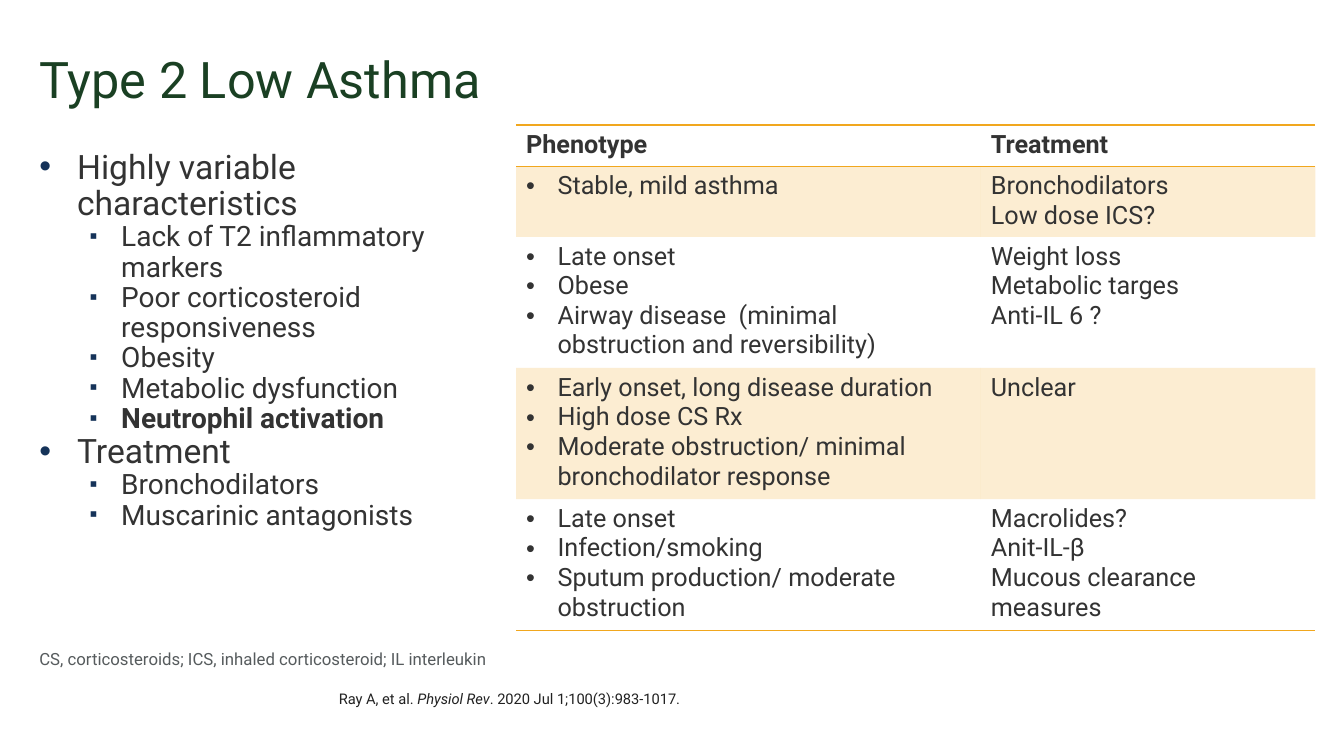
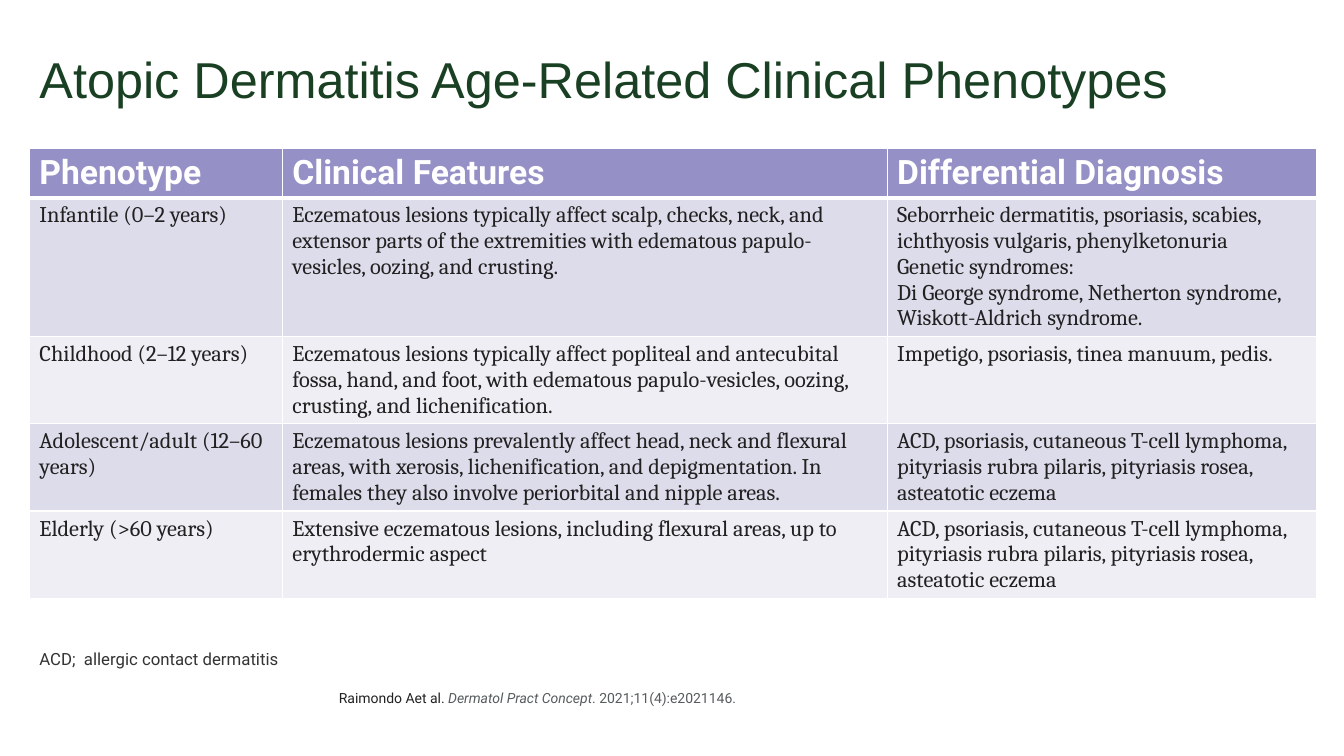
"""Build two clinical slides on asthma and dermatitis phenotypes."""
from lxml.etree import SubElement
from pptx import Presentation
from pptx.dml.color import RGBColor
from pptx.enum.text import MSO_ANCHOR as Anchor, MSO_AUTO_SIZE as AutoSize, PP_ALIGN as Align
from pptx.oxml.ns import qn
from pptx.util import Pt

COLORS = {
    "title": "1A4023", "body": "333333", "dark": "212121", "grey": "565B5D",
    "bullet": "153359", "gold": "F1A71E", "white": "FFFFFF",
    "header": "9591C7", "band": "DDDCEB", "pale": "EFEEF5",
}
PLAIN_TABLE = "{2D5ABB26-0587-4C30-8999-92F81FD0307C}"
LEFT, WIDTH = 21, 920
TITLE_AREA = (LEFT, 13.7, WIDTH, 90)
LIST_AREA = (LEFT, 103.7, 322.5, 350.6)
NOTE_AREA = (LEFT, 454.3, WIDTH, 27.4)
CITATION_AREA = (235, 490.3, 705.6, 45.4)

ASTHMA_POINTS = [
    (0, "Highly variable characteristics"),
    (1, "Lack of T2 inflammatory markers"),
    (1, "Poor corticosteroid responsiveness"),
    (1, "Obesity"),
    (1, "Metabolic dysfunction"),
    (1, "Neutrophil activation"),
    (0, "Treatment"),
    (1, "Bronchodilators"),
    (1, "Muscarinic antagonists"),
]
EMPHASIZED = {"Neutrophil activation"}
LEVELS = [
    {"size": 24, "char": "•", "margin": 27, "hang": 27, "percent": 100},
    {"size": 20, "char": "▪", "margin": 58.5, "hang": 22.5, "percent": 80},
]
CELL_BULLET = {"char": "•", "margin": 22.5, "hang": 22.5, "percent": 100}

ASTHMA_ROWS = [
    (["Phenotype"], ["Treatment"]),
    (["Stable, mild asthma"], ["Bronchodilators", "Low dose ICS?"]),
    (["Late onset", "Obese",
      "Airway disease  (minimal obstruction and reversibility)"],
     ["Weight loss", "Metabolic targes", "Anti-IL 6 ?"]),
    (["Early onset, long disease duration", "High dose CS Rx",
      "Moderate obstruction/ minimal bronchodilator response"],
     ["Unclear"]),
    (["Late onset", "Infection/smoking", "Sputum production/ moderate obstruction"],
     ["Macrolides?", "Anit-IL-β", "Mucous clearance measures"]),
]
ADULT_DIAGNOSES = ["ACD, psoriasis, cutaneous T-cell lymphoma, pityriasis rubra pilaris, "
                   "pityriasis rosea, asteatotic eczema"]
DERMATITIS_ROWS = [
    (["Phenotype"], ["Clinical Features"], ["Differential Diagnosis"]),
    (["Infantile (0–2 years)"],
     ["Eczematous lesions typically affect scalp, checks, neck, and extensor parts of the "
      "extremities with edematous papulo-vesicles, oozing, and crusting."],
     ["Seborrheic dermatitis, psoriasis, scabies, ichthyosis vulgaris, phenylketonuria",
      "Genetic syndromes:",
      "Di George syndrome, Netherton syndrome, Wiskott-Aldrich syndrome."]),
    (["Childhood (2–12 years)"],
     ["Eczematous lesions typically affect popliteal and antecubital fossa, hand, and foot, "
      "with edematous papulo-vesicles, oozing, crusting, and lichenification."],
     ["Impetigo, psoriasis, tinea manuum, pedis."]),
    (["Adolescent/adult (12–60 years)"],
     ["Eczematous lesions prevalently affect head, neck and flexural areas, with xerosis, "
      "lichenification, and depigmentation. In females they also involve periorbital and "
      "nipple areas."],
     ADULT_DIAGNOSES),
    (["Elderly (>60 years)"],
     ["Extensive eczematous lesions, including flexural areas, up to erythrodermic aspect"],
     ADULT_DIAGNOSES),
]
ASTHMA_CITATION = [
    ("Ray A, et al. ", "dark", False),
    ("Physiol Rev", "dark", True),
    (". 2020 Jul 1;100(3):983-1017.", "dark", False),
]
DERMATITIS_CITATION = [
    ("Raimondo Aet al. ", "dark", False),
    ("Dermatol Pract Concept", "grey", True),
    (". 2021;11(4):e2021146.", "grey", False),
]


def rgb(color):
    return RGBColor.from_string(COLORS[color])


def style(font, size, color, name="Roboto", bold=False, italic=False):
    font.name, font.size = name, Pt(size)
    font.bold, font.italic = bold, italic
    font.color.rgb = rgb(color)


def style_paragraphs(frame, *look, **options):
    for para in frame.paragraphs:
        for span in para.runs:
            style(span.font, *look, **options)


def add_bullet(para, color, char, margin, hang, percent):
    props = para._p.get_or_add_pPr()
    props.set("marL", str(Pt(margin)))
    props.set("indent", str(-Pt(hang)))
    SubElement(SubElement(props, qn("a:buClr")), qn("a:srgbClr"), val=COLORS[color])
    SubElement(props, qn("a:buSzPct"), val=str(percent * 1000))
    SubElement(props, qn("a:buFont"), typeface="Arial")
    SubElement(props, qn("a:buChar"), char=char)


def add_page(deck, title, font_name):
    page = deck.slides.add_slide(deck.slide_layouts[5])
    box = page.shapes.title
    box.left, box.top, box.width, box.height = map(Pt, TITLE_AREA)
    frame = box.text_frame
    frame.text = title
    frame.word_wrap, frame.auto_size = True, AutoSize.NONE
    frame.vertical_anchor = Anchor.MIDDLE
    frame.paragraphs[0].alignment = Align.LEFT
    frame.paragraphs[0].line_spacing = 0.9
    style_paragraphs(frame, 36, "title", name=font_name)
    return page


def add_text(page, area, text, anchor=Anchor.TOP):
    frame = page.shapes.add_textbox(*map(Pt, area)).text_frame
    frame.word_wrap, frame.vertical_anchor = True, anchor
    frame.text = text
    for para in frame.paragraphs:
        para.line_spacing = 0.9
    return frame


def add_footer(page, note, note_color, citation, citation_size):
    style_paragraphs(add_text(page, NOTE_AREA, note, Anchor.BOTTOM), 12, note_color)
    para = add_text(page, CITATION_AREA, "").paragraphs[0]
    for text, color, italic in citation:
        span = para.add_run()
        span.text = text
        style(span.font, citation_size, color, italic=italic)


def add_points(page, points):
    frame = add_text(page, LIST_AREA, "\n".join(text for _, text in points))
    for para, (depth, text) in zip(frame.paragraphs, points):
        bullet = dict(LEVELS[depth])
        size = bullet.pop("size")
        para.level = depth
        add_bullet(para, "bullet", **bullet)
        style(para.runs[0].font, size, "body", bold=text in EMPHASIZED)


def add_borders(cell, color, widths):
    props = cell._tc.get_or_add_tcPr()
    for side in "LRTB":
        if side in widths:
            line = SubElement(props, qn(f"a:ln{side}"), w=str(Pt(widths[side])))
            fill = SubElement(line, qn("a:solidFill"))
            SubElement(fill, qn("a:srgbClr"), val=COLORS[color])


def fill_cell(cell, color, opacity=100):
    cell.fill.solid()
    cell.fill.fore_color.rgb = rgb(color)
    if opacity < 100:
        tint = cell._tc.tcPr.find(qn("a:solidFill")).find(qn("a:srgbClr"))
        SubElement(tint, qn("a:alpha"), val=str(opacity * 1000))


def add_grid(page, left, top, widths, heights, rows, format_cell):
    area = map(Pt, (left, top, sum(widths), sum(heights)))
    table = page.shapes.add_table(len(rows), len(widths), *area).table
    table.horz_banding = False
    table._tbl.tblPr.find(qn("a:tableStyleId")).text = PLAIN_TABLE
    for column, width in zip(table.columns, widths):
        column.width = Pt(width)
    for row, height in zip(table.rows, heights):
        row.height = Pt(height)
    for row_index, texts in enumerate(rows):
        for column_index, lines in enumerate(texts):
            cell = table.cell(row_index, column_index)
            cell.text_frame.text = "\n".join(lines)
            format_cell(cell, row_index, column_index)


def format_asthma_cell(cell, row, column):
    if row == 0:
        add_borders(cell, "gold", {"T": 1, "B": 1})
    elif row == len(ASTHMA_ROWS) - 1:
        add_borders(cell, "gold", {"B": 1})
    if row % 2:
        fill_cell(cell, "gold", 20)
    else:
        cell.fill.background()
    if row and column == 0:
        for para in cell.text_frame.paragraphs:
            add_bullet(para, "body", **CELL_BULLET)
    style_paragraphs(cell.text_frame, 18, "body", bold=row == 0)


def format_dermatitis_cell(cell, row, column):
    add_borders(cell, "white", {"L": 1, "R": 1, "T": 3 if row == 1 else 1,
                                "B": 1 if row else 3})
    if row == 0:
        fill_cell(cell, "header")
        style_paragraphs(cell.text_frame, 24, "white", bold=True)
    else:
        fill_cell(cell, "band" if row % 2 else "pale")
        style_paragraphs(cell.text_frame, 16, "dark", name="Cambria")


def main():
    deck = Presentation()
    deck.slide_width, deck.slide_height = Pt(960), Pt(540)

    page = add_page(deck, "Type 2 Low Asthma", "Roboto")
    add_points(page, ASTHMA_POINTS)
    add_grid(page, 368.6, 89.3, [332, 239], [29.5, 49.5] + [91.6] * 3,
             ASTHMA_ROWS, format_asthma_cell)
    add_footer(page, "CS, corticosteroids; ICS, inhaled corticosteroid; IL interleukin",
               "grey", ASTHMA_CITATION, 10.5)

    page = add_page(deck, "Atopic Dermatitis Age-Related Clinical Phenotypes", "Arial")
    add_grid(page, LEFT, 105.8, [180.7, 432, 306.7], [35, 99] + [62] * 3,
             DERMATITIS_ROWS, format_dermatitis_cell)
    add_footer(page, "ACD;  allergic contact dermatitis", "body", DERMATITIS_CITATION, 10)

    deck.save("out.pptx")


if __name__ == "__main__":
    main()
